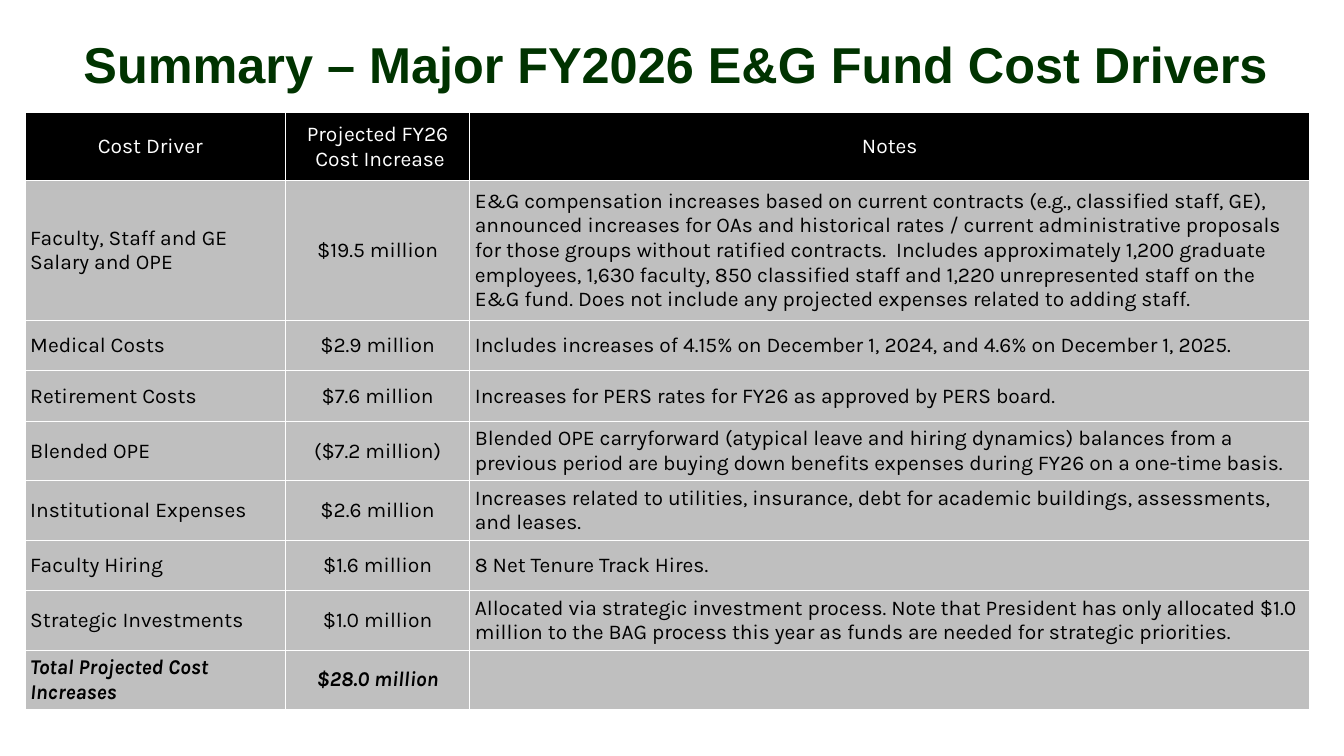
from pptx import Presentation
from pptx.dml.color import RGBColor
from pptx.enum.text import MSO_ANCHOR, PP_ALIGN
from pptx.util import Pt

LEFT, CENTER = PP_ALIGN.LEFT, PP_ALIGN.CENTER
MIDDLE = MSO_ANCHOR.MIDDLE
EMU_PER_PX = 9144
TITLE_ONLY = 5

TITLE = "Summary – Major FY2026 E&G Fund Cost Drivers"
TITLE_BOX = (33, 17, 1275, 91)
TABLE_BOX = (25, 112, 1275, 556)
COLUMN_WIDTHS = (258, 183, 833)
ROW_HEIGHTS = (67, 139) + (50,) * 7
COLUMN_ALIGNS = (LEFT, CENTER, LEFT)

TITLE_FONT = {"name": "Arial", "size": Pt(36), "bold": True}
CELL_FONT = {"name": "Karla", "size": Pt(15), "bold": False}
TOTAL_FONT = CELL_FONT | {"bold": True, "italic": True}

HEADERS = ("Cost Driver  ", "Projected FY26\n Cost Increase", "Notes")
COST_DRIVERS = (
    ("Faculty, Staff and GE Salary and OPE", "$19.5 million",
     "E&G compensation increases based on current contracts (e.g., classified staff, GE), "
     "announced increases for OAs and historical rates / current administrative proposals "
     "for those groups without ratified contracts.  Includes approximately 1,200 graduate "
     "employees, 1,630 faculty, 850 classified staff and 1,220 unrepresented staff on the "
     "E&G fund. Does not include any projected expenses related to adding staff."),
    ("Medical Costs", "$2.9 million",
     "Includes increases of 4.15% on December 1, 2024, and 4.6% on December 1, 2025."),
    ("Retirement Costs", "$7.6 million",
     "Increases for PERS rates for FY26 as approved by PERS board."),
    ("Blended OPE", "($7.2 million)",
     "Blended OPE carryforward (atypical leave and hiring dynamics) balances from a "
     "previous period are buying down benefits expenses during FY26 on a one-time basis."),
    ("Institutional Expenses", "$2.6 million",
     "Increases related to utilities, insurance, debt for academic buildings, assessments, "
     "and leases."),
    ("Faculty Hiring", "$1.6 million", "8 Net Tenure Track Hires."),
    ("Strategic Investments", "$1.0 million",
     "Allocated via strategic investment process. Note that President has only allocated $1.0 "
     "million to the BAG process this year as funds are needed for strategic priorities."),
)
TOTAL = ("Total Projected Cost Increases", "$28.0 million", "")


def px(length):
    return length * EMU_PER_PX


def color(hex_value):
    return RGBColor.from_string(hex_value)


def set_values(target, values):
    for name, value in values.items():
        setattr(target, name, value)


def write_text(frame, text, font, hex_color, align):
    frame.text = text
    for para in frame.paragraphs:
        para.alignment = align
        for span in para.runs:
            set_values(span.font, font)
            span.font.color.rgb = color(hex_color)


def add_title(page, box):
    title = page.shapes.title
    set_values(title, dict(zip(("left", "top", "width", "height"), map(px, box))))
    set_values(title.text_frame, {"word_wrap": True, "vertical_anchor": MIDDLE})
    write_text(title.text_frame, TITLE, TITLE_FONT, "003300", CENTER)


def fill_row(row, texts, aligns, font, text_color, fill_color, margins):
    side, edge = map(px, margins)
    cell_format = {"margin_left": side, "margin_right": side, "margin_top": edge,
                   "margin_bottom": edge, "vertical_anchor": MIDDLE}
    for cell, text, align in zip(row.cells, texts, aligns):
        set_values(cell, cell_format)
        cell.fill.solid()
        cell.fill.fore_color.rgb = color(fill_color)
        write_text(cell.text_frame, text, font, text_color, align)


def add_cost_table(page, box):
    table = page.shapes.add_table(len(ROW_HEIGHTS), len(COLUMN_WIDTHS), *map(px, box)).table
    table.horz_banding = False
    for column, width in zip(table.columns, COLUMN_WIDTHS):
        column.width = px(width)
    for row, height in zip(table.rows, ROW_HEIGHTS):
        row.height = px(height)
    header_row, *driver_rows, total_row = table.rows
    fill_row(header_row, HEADERS, (CENTER,) * 3, CELL_FONT, "FFFFFF", "000000", (7, 4))
    for row, driver in zip(driver_rows, COST_DRIVERS):
        fill_row(row, driver, COLUMN_ALIGNS, CELL_FONT, "000000", "BFBFBF", (5, 5))
    fill_row(total_row, TOTAL, COLUMN_ALIGNS, TOTAL_FONT, "000000", "BFBFBF", (5, 5))


def main():
    deck = Presentation()
    set_values(deck, {"slide_width": px(1333), "slide_height": px(750)})
    page = deck.slides.add_slide(deck.slide_layouts[TITLE_ONLY])
    add_title(page, TITLE_BOX)
    add_cost_table(page, TABLE_BOX)
    deck.save("out.pptx")


if __name__ == "__main__":
    main()
